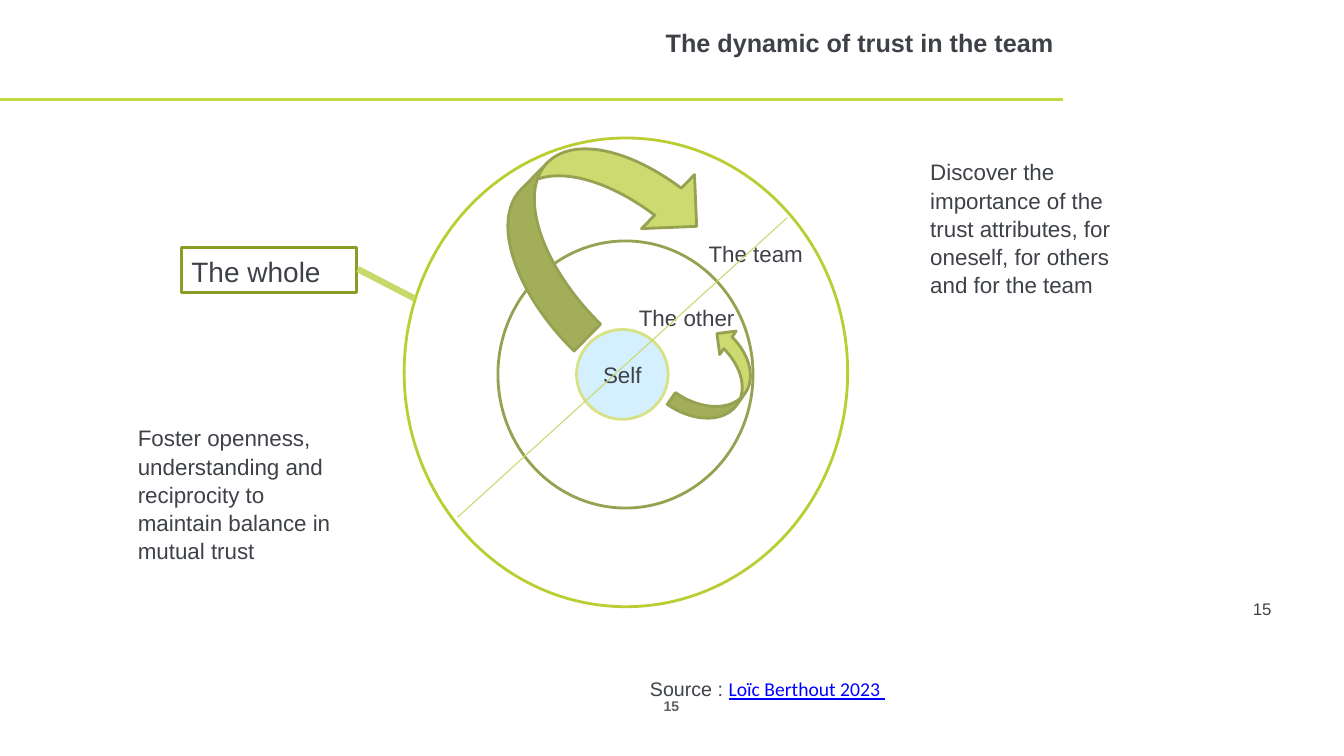
"""Build the slide on the dynamic of trust in the team."""
from lxml.etree import SubElement
from pptx import Presentation
from pptx.dml.color import RGBColor
from pptx.enum.shapes import MSO_CONNECTOR, MSO_SHAPE
from pptx.enum.text import MSO_ANCHOR, PP_ALIGN
from pptx.oxml.ns import qn
from pptx.util import Pt

INK = RGBColor(0x3E, 0x42, 0x48)
GREY = RGBColor(0x60, 0x60, 0x60)
LINK_BLUE = RGBColor(0x00, 0x00, 0xFF)
SKY = RGBColor(0xD4, 0xEF, 0xFE)
PALE_LIME = RGBColor(0xD6, 0xE2, 0x85)
ARROW_LIME = RGBColor(0xCC, 0xDA, 0x6F)
LINE_LIME = RGBColor(0xC9, 0xD8, 0x6A)
RULE_LIME = RGBColor(0xC3, 0xD9, 0x41)
RING_LIME = RGBColor(0xBA, 0xCE, 0x33)
OLIVE = RGBColor(0x97, 0xA1, 0x52)
DARK_OLIVE = RGBColor(0x8C, 0x9B, 0x25)

presentation = Presentation()
presentation.slide_width = Pt(960)
presentation.slide_height = Pt(540)
slide = presentation.slides.add_slide(presentation.slide_layouts[6])


def write(holder, text, size, align=PP_ALIGN.LEFT, anchor=MSO_ANCHOR.TOP,
          bold=False, color=INK):
    """Put one paragraph into a shape and return it."""
    frame = holder.text_frame
    frame.word_wrap = True
    frame.vertical_anchor = anchor
    paragraph = frame.paragraphs[0]
    paragraph.alignment = align
    paragraph.line_spacing = 1.05
    run = paragraph.add_run()
    run.text = text
    run.font.name = "Arial"
    run.font.size = Pt(size)
    run.font.bold = bold
    run.font.color.rgb = color
    return paragraph


def draw(kind, box, line, fill=None, width=2, rotation=0):
    """Add an outlined preset shape, filled when a fill is given."""
    shape = slide.shapes.add_shape(kind, *map(Pt, box))
    shape.shadow.inherit = False
    shape.rotation = rotation
    shape.line.color.rgb = line
    shape.line.width = Pt(width)
    if fill is None:
        shape.fill.background()
    else:
        shape.fill.solid()
        shape.fill.fore_color.rgb = fill
    return shape


circle = MSO_SHAPE.FLOWCHART_CONNECTOR
self_circle = draw(circle, (411.8, 235.4, 65.5, 64.1), PALE_LIME, SKY)
write(self_circle, "Self", 16, PP_ALIGN.CENTER, MSO_ANCHOR.MIDDLE)
draw(circle, (355.7, 172.1, 182.2, 190.8), OLIVE)
draw(circle, (288.7, 98.6, 316.8, 334.8), RING_LIME)

whole = draw(MSO_SHAPE.RECTANGLE, (129.6, 177.1, 125.3, 31.7), DARK_OLIVE, width=2.25)
write(whole, "The whole", 20)

draw(MSO_SHAPE.CURVED_LEFT_ARROW, (370.8, 82.8, 108, 151.9), OLIVE, ARROW_LIME, rotation=224.5)
draw(MSO_SHAPE.CURVED_UP_ARROW, (478.1, 250.6, 72, 41), OLIVE, ARROW_LIME, rotation=305.1)

for text, size, box in (
    ("The other", 16, (449.3, 213.1, 84.2, 26.6)),
    ("The team", 16, (499, 167, 87.8, 26.6)),
    ("Discover the importance of the trust attributes, for oneself, "
     "for others and for the team", 16, (657.4, 108.7, 158.4, 104.4)),
    ("Foster openness, understanding and reciprocity to maintain "
     "balance in mutual trust", 16, (91.4, 298.8, 158.4, 104.4)),
    ("15", 12, (887.8, 423.4, 62.6, 21.6)),
):
    write(slide.shapes.add_textbox(*map(Pt, box)), text, size)

for ends, color, width in (
    ((759.6, 71.3, 0, 71.3), RULE_LIME, 2),
    ((295.9, 213.1, 255.6, 192.2), LINE_LIME, 4.5),
    ((326.9, 369.4, 562.3, 155.5), LINE_LIME, 0.75),
):
    line = slide.shapes.add_connector(MSO_CONNECTOR.STRAIGHT, *map(Pt, ends))
    line.line.color.rgb = color
    line.line.width = Pt(width)
    SubElement(line._element.spPr, qn("a:effectLst"))

title = slide.shapes.add_textbox(Pt(0), Pt(15), Pt(759.6), Pt(30))
write(title, "The dynamic of trust in the team", 18, PP_ALIGN.RIGHT, MSO_ANCHOR.MIDDLE, True)

source = slide.shapes.add_textbox(Pt(457.2), Pt(479.5), Pt(351.4), Pt(24.5))
author = write(source, "Source : ", 14).add_run()
author.text = "Loïc Berthout 2023 "
author.font.name = "Calibri"
author.font.size = Pt(14)
author.font.underline = True
author.font.color.rgb = LINK_BLUE

page_number = slide.shapes.add_textbox(Pt(460.8), Pt(495.4), Pt(37.4), Pt(17.3))
write(page_number, "15", 10, PP_ALIGN.CENTER, MSO_ANCHOR.MIDDLE, True, GREY)

presentation.save("out.pptx")
